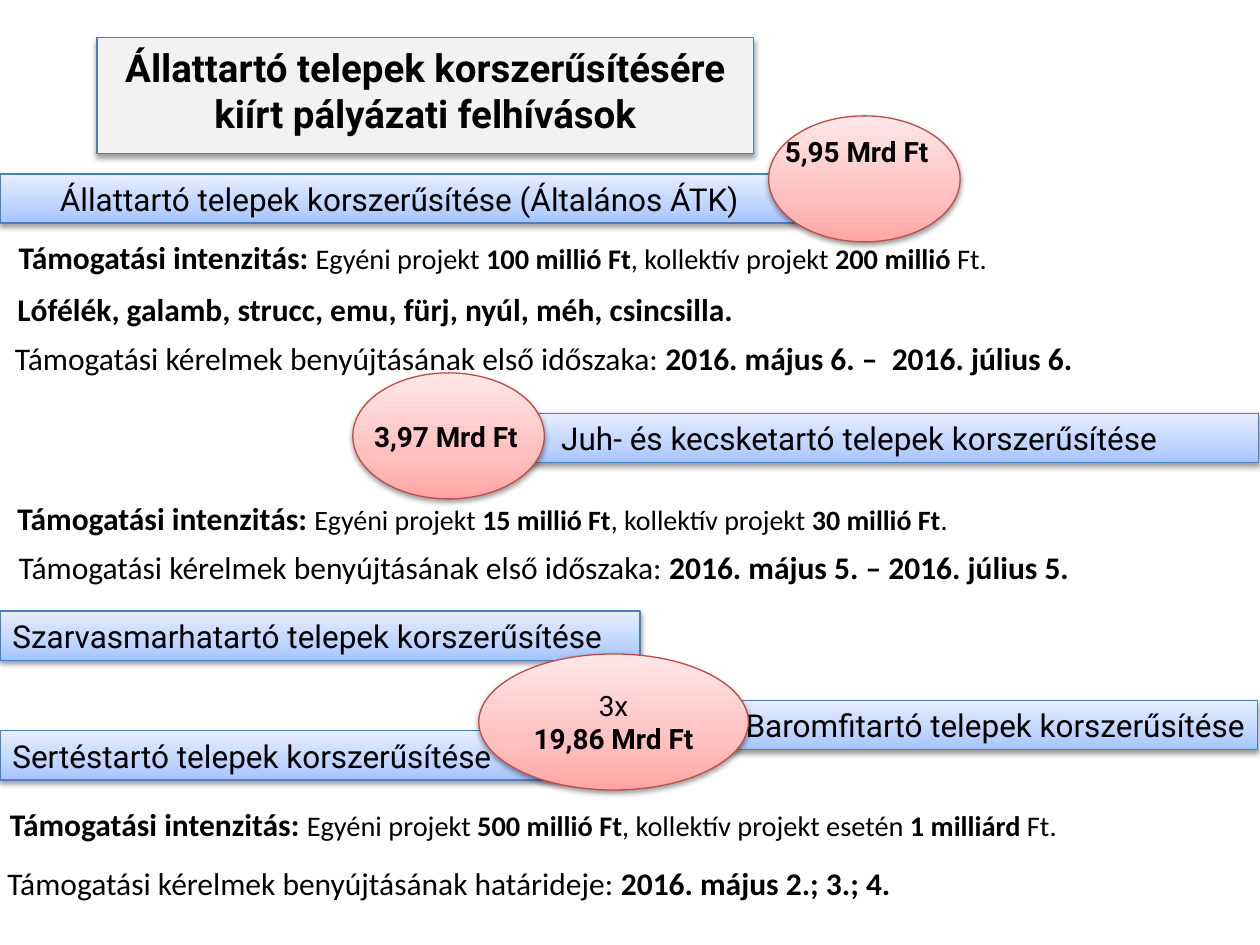
from pptx import Presentation
from pptx.dml.color import RGBColor
from pptx.enum.shapes import MSO_SHAPE
from pptx.enum.text import MSO_ANCHOR, MSO_AUTO_SIZE, PP_ALIGN
from pptx.oxml import parse_xml
from pptx.oxml.ns import nsdecls
from pptx.util import Inches, Pt

BLACK = RGBColor(0x00, 0x00, 0x00)
GREY = RGBColor(0xF2, 0xF2, 0xF2)
BLUE = RGBColor(0x4B, 0x7E, 0xBC)
RED = RGBColor(0xBF, 0x4C, 0x48)
# Gradient colours from bottom to top
SKY = (RGBColor(0xA4, 0xC4, 0xFF), RGBColor(0xBF, 0xD4, 0xFF), RGBColor(0xE6, 0xEE, 0xFF))
ROSE = (RGBColor(0xFF, 0xA6, 0xA5), RGBColor(0xFF, 0xC0, 0xBF), RGBColor(0xFF, 0xE7, 0xE7))
STOPS = (0, 35, 100)

LEFT, MID, RIGHT = PP_ALIGN.LEFT, PP_ALIGN.CENTER, PP_ALIGN.RIGHT
BAR_H = 0.39


class Style:
    def __init__(self, slide):
        self.slide = slide
        self.base = {"name": "Roboto", "size": Pt(18), "bold": False}

    def words(self, frame, paras, align=LEFT):
        """Each paragraph is a list of (text, format) runs."""
        for i, runs in enumerate(paras):
            para = frame.add_paragraph() if i else frame.paragraphs[0]
            para.alignment = align
            for text, form in runs:
                run = para.add_run()
                run.text = text
                for key, value in {**self.base, **form}.items():
                    setattr(run.font, key, value)
                run.font.color.rgb = BLACK

    def shape(self, kind, box, fill, edge):
        item = self.slide.shapes.add_shape(kind, *map(Inches, box))
        props = item.element.spPr
        if fill is GREY:
            item.fill.solid()
            item.fill.fore_color.rgb = fill
        else:
            stops = "".join(
                f'<a:gs pos="{pos * 1000}"><a:srgbClr val="{tone}"/></a:gs>'
                for pos, tone in zip(STOPS, fill))
            props.insert(2, parse_xml(
                f'<a:gradFill {nsdecls("a")} rotWithShape="1"><a:gsLst>{stops}</a:gsLst>'
                '<a:lin ang="16200000" scaled="0"/></a:gradFill>'))
        item.line.color.rgb = edge
        item.line.width = Pt(0.75)
        props.append(parse_xml(
            f'<a:effectLst {nsdecls("a")}><a:outerShdw blurRad="{Pt(3.1)}" dist="{Pt(1.6)}" '
            'dir="5400000" rotWithShape="0"><a:srgbClr val="000000">'
            '<a:alpha val="38000"/></a:srgbClr></a:outerShdw></a:effectLst>'))
        return item

    def title(self, box, text):
        frame = self.shape(MSO_SHAPE.RECTANGLE, box, GREY, BLUE).text_frame
        frame.vertical_anchor = MSO_ANCHOR.TOP
        self.words(frame, [[(text, {"size": Pt(22), "bold": True})]], MID)

    def bar(self, left, top, width, text, align=MID):
        box = (left, top, width, BAR_H)
        frame = self.shape(MSO_SHAPE.RECTANGLE, box, SKY, BLUE).text_frame
        self.words(frame, [[(text, {})]], align)

    def oval(self, box, paras=()):
        frame = self.shape(MSO_SHAPE.OVAL, box, ROSE, RED).text_frame
        self.words(frame, paras, MID)

    def label(self, box, runs, wrap=False):
        frame = self.slide.shapes.add_textbox(*map(Inches, box)).text_frame
        frame.word_wrap = wrap
        frame.auto_size = MSO_AUTO_SIZE.SHAPE_TO_FIT_TEXT
        self.words(frame, [runs])

    def sum(self, left, top, text):
        self.label((left, top, 1.39, 0.37), [(text, {"size": Pt(16), "bold": True})])

    def grant(self, left, top, size, parts):
        """Parts alternate between plain and bold."""
        runs = [("Támogatási intenzitás: ", {"name": "Calibri", "bold": True})]
        runs += [(part, {"name": "Calibri", "size": Pt(size), "bold": i % 2 == 1})
                 for i, part in enumerate(parts)]
        self.label((left, top, 10, 0.4), runs, True)

    def dates(self, left, top, width, plain, strong):
        runs = [(plain, {"name": "Calibri"}), (strong, {"name": "Calibri", "bold": True})]
        self.label((left, top, width, 0.4), [run for run in runs if run[0]])


def main():
    deck = Presentation()
    deck.slide_width, deck.slide_height = Inches(10), Inches(7.5)
    page = Style(deck.slides.add_slide(deck.slide_layouts[6]))
    first = "Támogatási kérelmek benyújtásának első időszaka: "
    solo = "Egyéni projekt "
    group = ", kollektív projekt "

    # Title
    page.title((0.77, 0.3, 5.21, 0.92),
               "Állattartó telepek korszerűsítésére kiírt pályázati felhívások")

    # General call
    page.bar(0, 1.38, 6.34, "Állattartó telepek korszerűsítése (Általános ÁTK)")
    page.oval((6.1, 0.92, 1.52, 1))
    page.sum(6.13, 1.02, "5,95 Mrd Ft")
    page.grant(0.05, 1.84, 16.2, [solo, "100 millió Ft", group, "200 millió ", "Ft."])
    page.dates(0.04, 2.25, 5.93, "",
               "Lófélék, galamb, strucc, emu, fürj, nyúl, méh, csincsilla.")
    page.dates(0.02, 2.64, 8.88, first, "2016. május 6. –  2016. július 6.")

    # Sheep and goats
    page.bar(3.65, 3.28, 6.34, "Juh- és kecsketartó telepek korszerűsítése")
    page.oval((2.8, 2.96, 1.52, 1))
    page.sum(2.87, 3.28, "3,97 Mrd Ft")
    page.grant(0.04, 3.91, 16, [solo, "15 millió Ft", group, "30 millió Ft", "."])
    page.dates(0.05, 4.3, 8.63, first, "2016. május 5. – 2016. július 5.")

    # Cattle, pigs and poultry
    page.bar(0, 4.85, 5.08, "Szarvasmarhatartó telepek korszerűsítése", LEFT)
    page.bar(0, 5.8, 5.1, "Sertéstartó telepek korszerűsítése", LEFT)
    page.bar(5.41, 5.56, 4.57, "Baromfitartó telepek korszerűsítése", RIGHT)
    page.oval((3.8, 5.19, 2.14, 1.08),
              [[("3x", {"size": Pt(16)})],
               [("19,86 Mrd Ft", {"size": Pt(16), "bold": True})]])
    page.grant(-0.02, 6.34, 16.2,
               [solo, "500 millió Ft", group + "esetén", " 1 milliárd ", "Ft."])
    page.dates(-0.04, 6.81, 7.29, "Támogatási kérelmek benyújtásának határideje: ",
               "2016. május 2.; 3.; 4.")

    deck.save("out.pptx")


if __name__ == "__main__":
    main()
